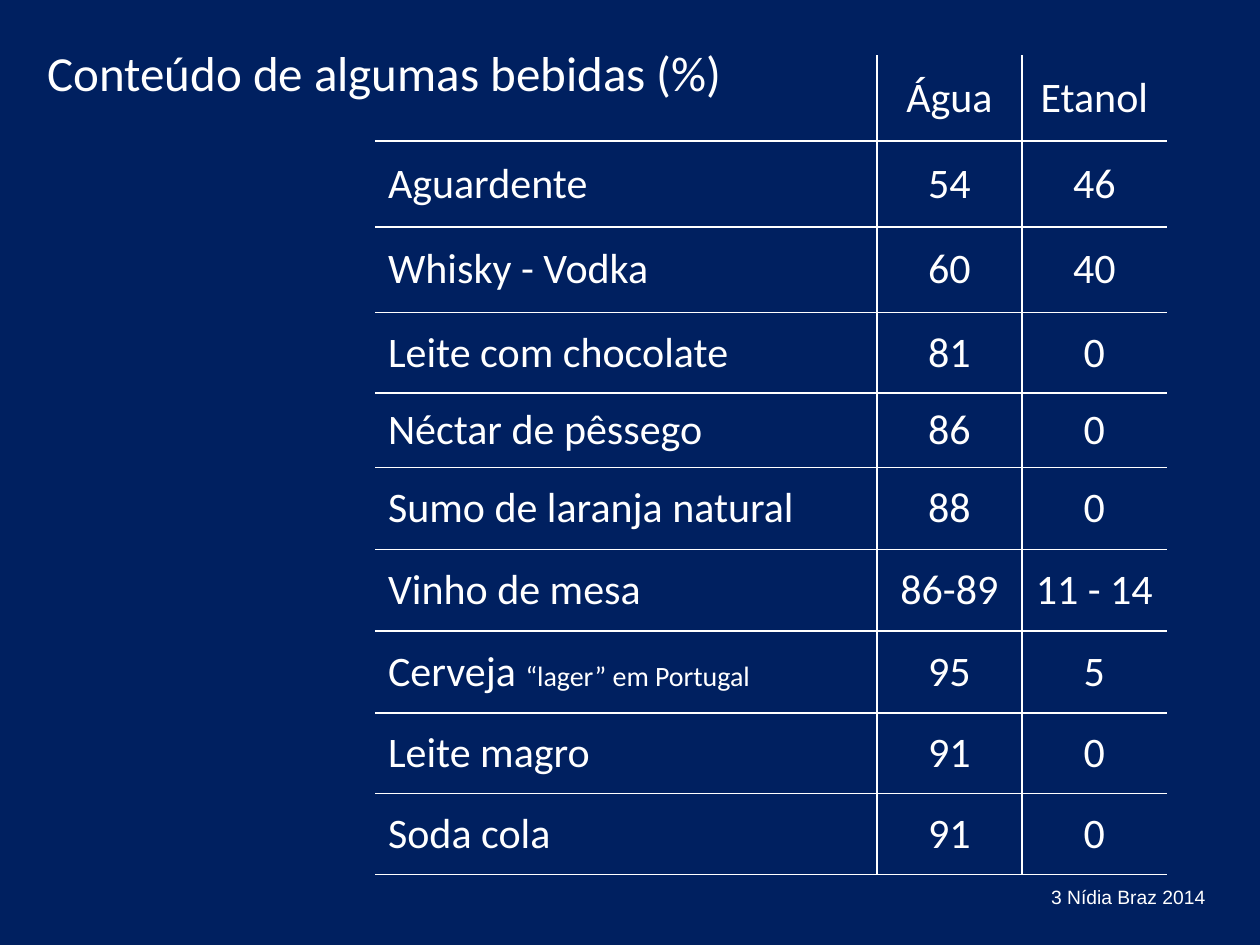
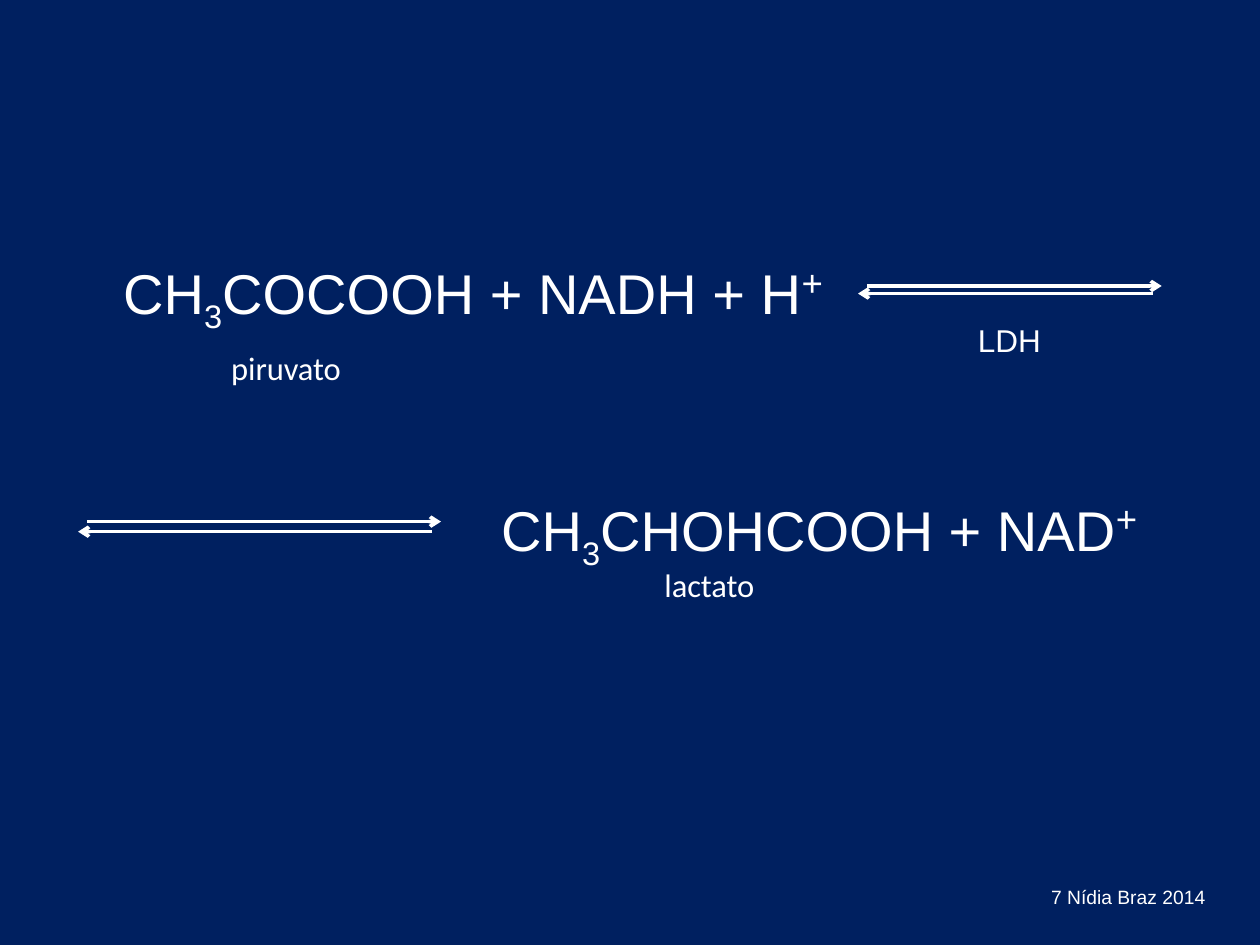
from lxml.etree import SubElement
from pptx import Presentation
from pptx.dml.color import RGBColor
from pptx.enum.shapes import MSO_CONNECTOR
from pptx.enum.text import MSO_ANCHOR, PP_ALIGN
from pptx.oxml.ns import qn
from pptx.util import Inches, Pt

COLORS = {"background": "002060", "ink": "FFFFFF"}
BODY_FONT, FORMULA_FONT = "Calibri", "Arial"
AUTHOR = "Nídia Braz 2014"

BEVERAGES = [
    ("", "Água", "Etanol"),
    ("Aguardente", "54", "46"),
    ("Whisky - Vodka", "60", "40"),
    ("Leite com chocolate", "81", "0"),
    ("Néctar de pêssego", "86", "0"),
    ("Sumo de laranja natural", "88", "0"),
    ("Vinho de mesa", "86-89", "11 - 14"),
    (("Cerveja ", "“lager” em Portugal"), "95", "5"),
    ("Leite magro", "91", "0"),
    ("Soda cola", "91", "0"),
]
COLUMN_WIDTHS = [3.98, 1.15, 1.15]
ROW_HEIGHTS = [0.68] * 3 + [0.64, 0.59] + [0.65] * 3 + [0.64] * 2


def color(name):
    return RGBColor.from_string(COLORS[name])


def add_span(para, text, size, font, baseline=0):
    """Append a run; baseline is a percentage, positive for superscript."""
    span = para.add_run()
    span.text = text
    span.font.size = Pt(size)
    span.font.name = font
    span.font.color.rgb = color("ink")
    if baseline:
        span.font._element.set("baseline", str(baseline * 1000))


def add_text(page, box, spans, align=PP_ALIGN.LEFT):
    """Add a one-paragraph text box; spans hold the arguments of add_span."""
    frame = page.shapes.add_textbox(*map(Inches, box)).text_frame
    frame.word_wrap = True
    para = frame.paragraphs[0]
    para.alignment = align
    for span in spans:
        add_span(para, *span)


def add_page(deck, number):
    page = deck.slides.add_slide(deck.slide_layouts[6])
    page.background.fill.solid()
    page.background.fill.fore_color.rgb = color("background")
    add_text(page, (8.13, 6.98, 1.65, 0.29),
             [(f"{number} {AUTHOR}", 11, FORMULA_FONT)], PP_ALIGN.CENTER)
    return page


def set_borders(cell, visible):
    """Draw the sides named in visible and hide the other ones."""
    properties = cell._tc.get_or_add_tcPr()
    for index, side in enumerate(("L", "R", "T", "B")):
        line = properties.makeelement(qn(f"a:ln{side}"), {"w": str(Pt(1))})
        properties.insert(index, line)
        if side in visible:
            fill = SubElement(line, qn("a:solidFill"))
            SubElement(fill, qn("a:srgbClr"), val=COLORS["ink"])
        else:
            SubElement(line, qn("a:noFill"))


def add_beverage_table(page, box):
    table = page.shapes.add_table(len(BEVERAGES), len(COLUMN_WIDTHS), *map(Inches, box)).table
    table.first_row = table.horz_banding = False
    for column, width in zip(table.columns, COLUMN_WIDTHS):
        column.width = Inches(width)
    for row, height in zip(table.rows, ROW_HEIGHTS):
        row.height = Inches(height)
    for r, values in enumerate(BEVERAGES):
        for c, value in enumerate(values):
            cell = table.cell(r, c)
            cell.fill.background()
            cell.vertical_anchor = MSO_ANCHOR.MIDDLE
            visible = "B" + "T" * (r > 0) + "L" * (c > 0) + "R" * (c < len(values) - 1)
            set_borders(cell, visible)
            para = cell.text_frame.paragraphs[0]
            para.alignment = PP_ALIGN.CENTER if c else PP_ALIGN.LEFT
            para.space_before = Pt(5)
            parts = (value,) if isinstance(value, str) else value
            for text, size in zip(parts, (24, 16)):
                if text:
                    add_span(para, text, size, BODY_FONT)


def add_arrow(page, start, end):
    arrow = page.shapes.add_connector(MSO_CONNECTOR.STRAIGHT, *map(Inches, start + end))
    arrow.line.color.rgb = color("ink")
    arrow.line.width = Pt(2)
    SubElement(arrow.line._get_or_add_ln(), qn("a:tailEnd"), type="arrow")
    SubElement(arrow._element.spPr, qn("a:effectLst"))


def add_equilibrium(page, box):
    """Two opposed arrows along the top and bottom of the box."""
    left, top, width, height = box
    right, bottom, offset = left + width, top + height, 0.07
    add_arrow(page, (left + offset, top), (right, top))
    add_arrow(page, (right - offset, bottom), (left, bottom))


def add_formula(page, box, rest):
    """Write CH3, the rest of the formula and a raised plus sign."""
    add_text(page, box, [
        ("CH", 32, FORMULA_FONT),
        ("3", 32, FORMULA_FONT, -25),
        (rest, 32, FORMULA_FONT),
        ("+", 36, FORMULA_FONT, 30),
    ])


def add_compound_name(page, box, name):
    add_text(page, box, [(name, 32, BODY_FONT, 30)], PP_ALIGN.CENTER)


def build_beverages(deck):
    page = add_page(deck, 3)
    add_beverage_table(page, (2.98, 0.44, sum(COLUMN_WIDTHS), sum(ROW_HEIGHTS)))
    add_text(page, (0.28, 0.29, 5.67, 0.57),
             [("Conteúdo de algumas bebidas (%)", 28, BODY_FONT)])


def build_reaction(deck):
    page = add_page(deck, 7)
    add_formula(page, (0.88, 1.95, 5.9, 0.65), "COCOOH + NADH + H")
    add_equilibrium(page, (6.81, 2.27, 2.41, 0.06))
    add_text(page, (7.27, 2.5, 1.48, 0.4), [("LDH", 18, FORMULA_FONT)], PP_ALIGN.CENTER)
    add_compound_name(page, (1.33, 2.66, 1.88, 0.46), "piruvato")
    add_equilibrium(page, (0.62, 4.14, 2.88, 0.08))
    add_formula(page, (3.88, 3.83, 5.6, 0.65), "CHOHCOOH + NAD")
    add_compound_name(page, (4.3, 4.38, 2.66, 0.46), "lactato")


def main():
    deck = Presentation()
    deck.slide_width, deck.slide_height = Inches(10), Inches(7.5)
    build_beverages(deck)
    build_reaction(deck)
    deck.save("out.pptx")


if __name__ == "__main__":
    main()
